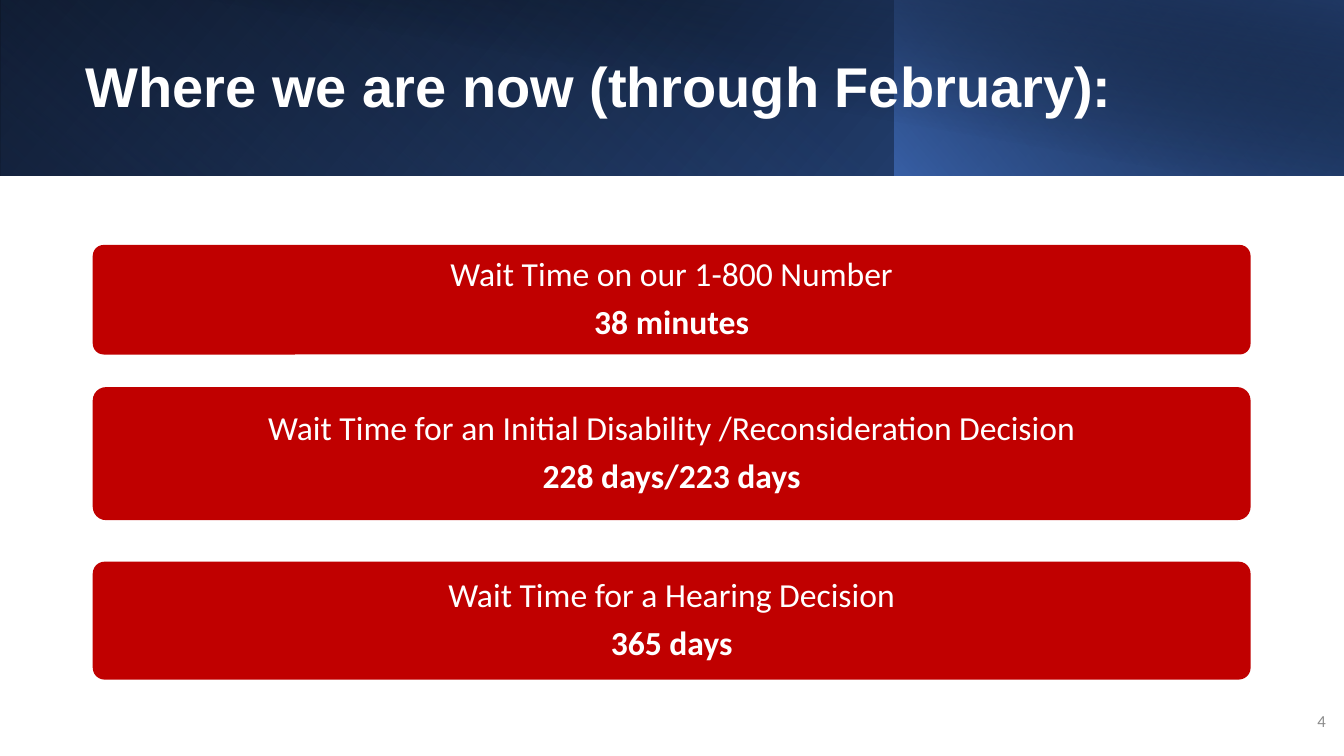
from typing import NamedTuple

from pptx import Presentation
from pptx.dml.color import RGBColor
from pptx.enum.shapes import MSO_SHAPE as Shape
from pptx.enum.text import MSO_ANCHOR as Anchor, PP_ALIGN as Align
from pptx.oxml.ns import qn
from pptx.oxml.xmlchemy import OxmlElement as Element
from pptx.util import Inches, Pt

WIDE, HIGH = Inches(13.33), Inches(7.5)
COL, ROW = WIDE / 100, HIGH / 100

WHITE = RGBColor(0xFF, 0xFF, 0xFF)
BLACK = RGBColor(0x00, 0x00, 0x00)
RED = RGBColor(0xC0, 0x00, 0x00)
GRAY = RGBColor(0x8C, 0x8C, 0x8C)
BLUE = RGBColor(0x44, 0x72, 0xC4)
DEEP = RGBColor(0x2F, 0x55, 0x97)
NAVY = RGBColor(0x20, 0x38, 0x64)


class Box(NamedTuple):
    """Place on a grid of 100 columns by 100 rows."""
    x: float
    y: float
    w: float
    h: float

    def span(self) -> tuple:
        return (round(self.x * COL), round(self.y * ROW),
                round(self.w * COL), round(self.h * ROW))


class Stop(NamedTuple):
    at: float
    color: RGBColor
    alpha: int = 100


class Panel(NamedTuple):
    box: Box
    stops: tuple
    angle: int
    flip: bool = True
    turn: int = 0


class Card(NamedTuple):
    y: float
    h: float
    label: str
    value: str


BAND, SPLIT = 23.2, 66.55
PANELS = (
    Panel(Box(0, 0, 100, BAND), (Stop(0, BLACK), Stop(1, DEEP)), 140),
    Panel(Box(0, 0, SPLIT, BAND),
          (Stop(0.2, BLUE, 0), Stop(1, NAVY, 55)), 230, turn=180),
    Panel(Box(SPLIT, 0, 100 - SPLIT, BAND),
          (Stop(0, BLUE, 66), Stop(1, BLACK, 30)), 220),
    Panel(Box(3.75, 0, 96.25, BAND),
          (Stop(0.5, BLACK, 0), Stop(0.99, NAVY, 52)), 280, flip=False),
)
CARDS = (
    Card(32.4, 14.5, "Wait Time on our 1-800 Number", "38 minutes"),
    Card(51.2, 17.6,
         "Wait Time for an Initial Disability /Reconsideration Decision",
         "228 days/223 days"),
    Card(74.3, 15.6, "Wait Time for a Hearing Decision", "365 days"),
)


def style(para, face: str, size: int, color: RGBColor, align,
          bold: bool = False) -> None:
    para.alignment = align
    for run in para.runs:
        font = run.font
        font.name, font.size, font.bold = face, Pt(size), bold
        font.color.rgb = color


def add_plain(slide, kind, box: Box):
    """Add a shape with no line and no shadow."""
    shape = slide.shapes.add_shape(kind, *box.span())
    shape.shadow.inherit = False
    shape.line.fill.background()
    return shape


def add_panel(slide, panel: Panel) -> None:
    shape = add_plain(slide, Shape.RECTANGLE, panel.box)
    shape.rotation = panel.turn
    props = shape._element.spPr
    if panel.flip:
        props.find(qn("a:xfrm")).set("flipH", "1")
    shape.fill.gradient()
    shape.fill.gradient_angle = 360 - panel.angle
    for mark, stop in zip(shape.fill.gradient_stops, panel.stops):
        mark.position = stop.at
        mark.color.rgb = stop.color
    for node, stop in zip(props.iter(qn("a:srgbClr")), panel.stops):
        if stop.alpha < 100:
            alpha = Element("a:alpha")
            alpha.set("val", str(stop.alpha * 1000))
            node.append(alpha)


def add_card(slide, card: Card) -> None:
    shape = add_plain(slide, Shape.ROUNDED_RECTANGLE,
                      Box(6.9, card.y, 86.15, card.h))
    shape.adjustments[0] = 0.1
    shape.fill.solid()
    shape.fill.fore_color.rgb = RED
    frame = shape.text_frame
    frame.word_wrap = True
    frame.vertical_anchor = Anchor.MIDDLE
    frame.margin_top = frame.margin_bottom = Inches(0.1)
    frame.text = f"{card.label}\n{card.value}"
    for para, bold in zip(frame.paragraphs, (False, True)):
        para.line_spacing = 0.9
        para.space_after = Pt(8)
        style(para, "Calibri", 24, WHITE, Align.CENTER, bold)


def set_title(slide, text: str) -> None:
    """Place the title above the header panels."""
    title = slide.shapes.title
    slide.shapes._spTree.append(title._element)
    title.left, title.top, title.width, title.height = Box(
        5.63, 4.27, 86.8, 15.07).span()
    frame = title.text_frame
    frame.text = text
    frame.word_wrap = True
    frame.vertical_anchor = Anchor.MIDDLE
    para = frame.paragraphs[0]
    para.line_spacing = 0.9
    style(para, "Arial", 40, WHITE, Align.LEFT, True)


def add_number(slide, text: str) -> None:
    frame = slide.shapes.add_textbox(
        *Box(70.65, 92.67, 28.75, 5.33).span()).text_frame
    frame.word_wrap = True
    frame.vertical_anchor = Anchor.MIDDLE
    frame.text = text
    style(frame.paragraphs[0], "Calibri", 12, GRAY, Align.RIGHT)


def main() -> None:
    deck = Presentation()
    deck.slide_width, deck.slide_height = WIDE, HIGH
    slide = deck.slides.add_slide(deck.slide_layouts.get_by_name("Title Only"))
    for panel in PANELS:
        add_panel(slide, panel)
    set_title(slide, "Where we are now (through February):")
    for card in CARDS:
        add_card(slide, card)
    add_number(slide, "4")
    deck.save("out.pptx")


if __name__ == "__main__":
    main()
